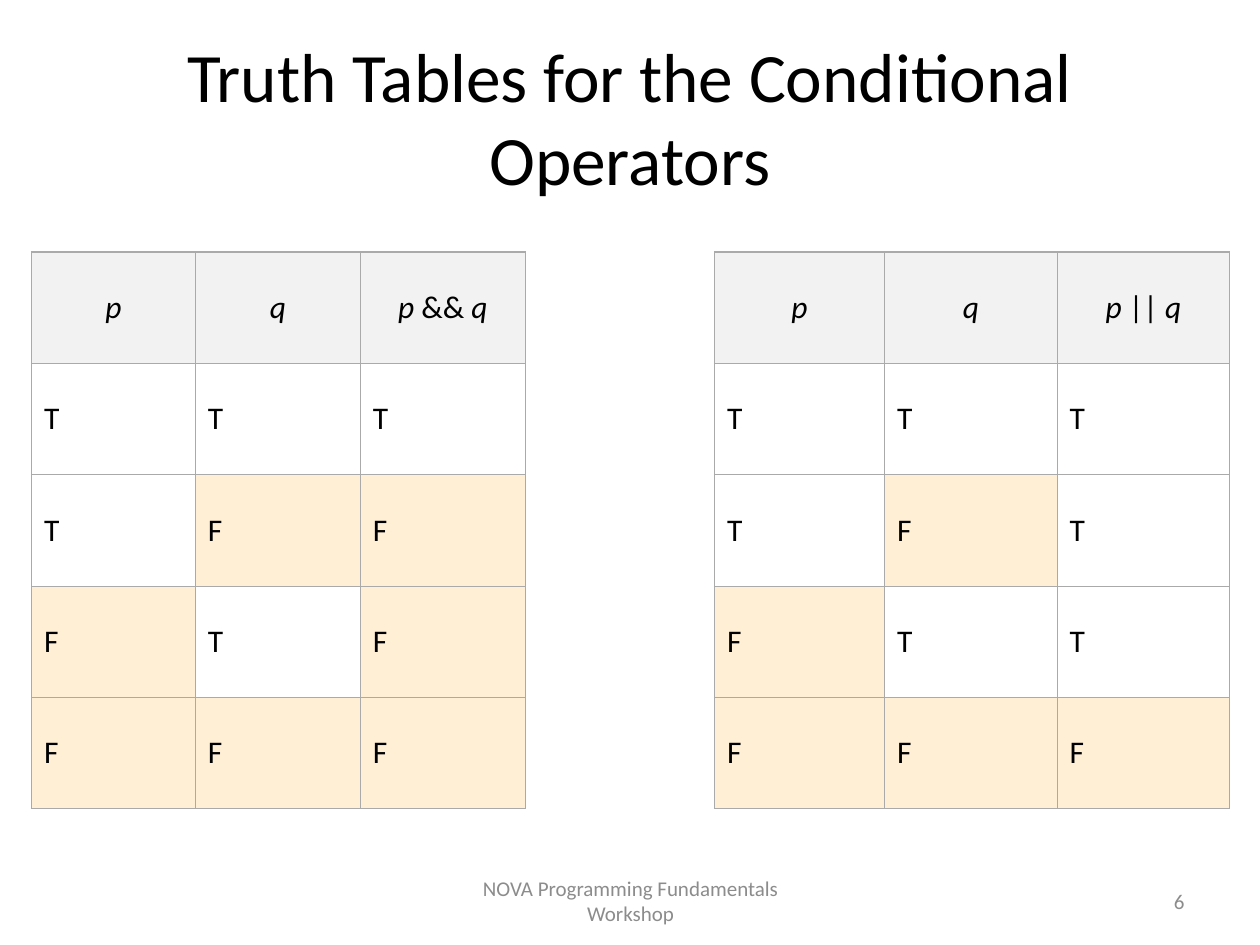
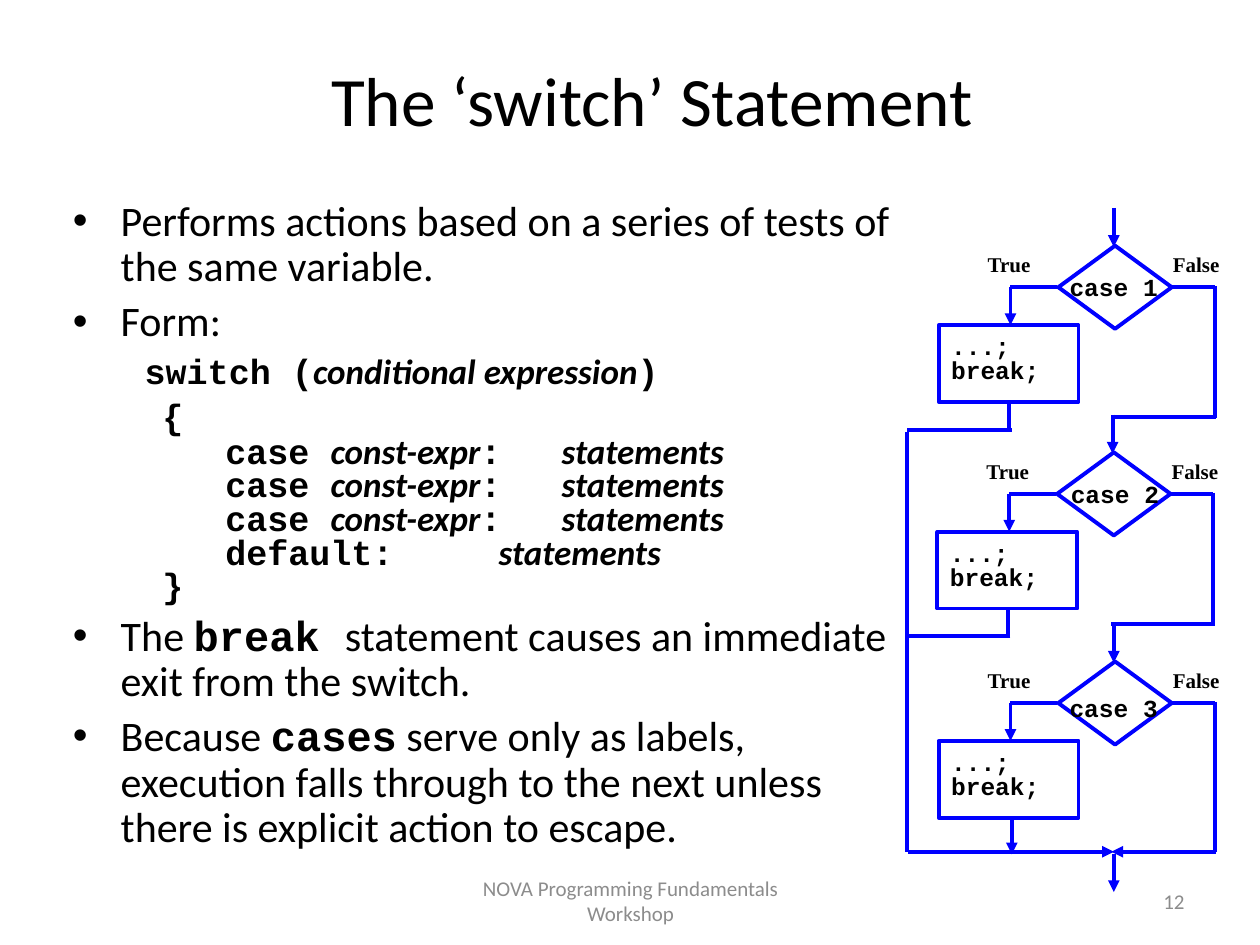
from dataclasses import dataclass

from lxml import etree
from pptx import Presentation
from pptx import util as u
from pptx.dml.color import RGBColor
from pptx.enum import shapes, text
from pptx.oxml import ns

PX = 9144  # one hundredth of an inch
CENTER, RIGHT = text.PP_ALIGN.CENTER, text.PP_ALIGN.RIGHT
MIDDLE = text.MSO_ANCHOR.MIDDLE


@dataclass(frozen=True)
class Theme:
    ink: str = "000000"
    muted: str = "8C8C8C"
    flow: str = "0000FF"
    grid: str = "AAAAAA"
    header: str = "F2F2F2"
    false: str = "FFEFD5"
    body: str = "Calibri"
    code: str = "Courier New"
    label: str = "Times New Roman"
    title_size: float = 39.6
    bullet_size: int = 24
    listing_size: int = 20
    table_size: int = 18
    case_size: int = 14
    small_size: int = 12
    flow_width: float = 2.25
    grid_width: float = 0.75


THEME = Theme()
CODE = dict(font=THEME.code, bold=True)
TERM = dict(bold=True, italic=True)


def px(*lengths):
    return [u.Emu(length * PX) for length in lengths]


def write(para, words, font=THEME.body, size=THEME.table_size, color=THEME.ink,
          bold=False, italic=False):
    span = para.add_run()
    span.text = words
    span.font.name, span.font.size = font, u.Pt(size)
    span.font.bold, span.font.italic = bold, italic
    span.font.color.rgb = RGBColor.from_string(color)


def add_box(page, box, words="", align=None, anchor=text.MSO_ANCHOR.TOP, **style):
    frame = page.shapes.add_textbox(*px(*box)).text_frame
    frame.word_wrap, frame.vertical_anchor = True, anchor
    if words:
        frame.paragraphs[0].alignment = align
        write(frame.paragraphs[0], words, **style)
    return frame


def add_page(deck, title, title_box, number):
    """Add a blank page with the shared title and footer."""
    page = deck.slides.add_slide(deck.slide_layouts[6])
    add_box(page, title_box, title, CENTER, MIDDLE, size=THEME.title_size)
    footer = dict(anchor=MIDDLE, size=THEME.small_size, color=THEME.muted)
    add_box(page, (342, 695, 317, 40), "NOVA Programming Fundamentals Workshop",
            CENTER, **footer)
    add_box(page, (717, 695, 233, 40), str(number), RIGHT, **footer)
    return page


def add_borders(cell):
    props = cell._tc.get_or_add_tcPr()
    for position, side in enumerate(("a:lnL", "a:lnR", "a:lnT", "a:lnB")):
        line = etree.Element(ns.qn(side), w=str(u.Pt(THEME.grid_width)))
        fill = etree.SubElement(line, ns.qn("a:solidFill"))
        etree.SubElement(fill, ns.qn("a:srgbClr"), val=THEME.grid)
        props.insert(position, line)


def add_truth_table(page, box, widths, operator, results):
    rows = ["TT", "TF", "FT", "FF"]
    table = page.shapes.add_table(len(rows) + 1, 3, *px(*box)).table
    table.first_row = table.horz_banding = False
    for column, width in zip(table.columns, px(*widths)):
        column.width = width
    for row in table.rows:
        row.height = u.Emu(box[3] * PX // len(table.rows))

    headings = ["p", "q", f"p {operator} q"]
    values = [list(inputs + result) for inputs, result in zip(rows, results)]
    for y, entries in enumerate([headings] + values):
        for x, entry in enumerate(entries):
            cell = table.cell(y, x)
            cell.vertical_anchor = MIDDLE
            para = cell.text_frame.paragraphs[0]
            if y == 0:
                para.alignment = CENTER
                for part in entry.partition(f" {operator} "):
                    if part:
                        write(para, part, italic=part in ("p", "q"))
            else:
                write(para, entry)
            color = THEME.header if y == 0 else THEME.false if entry == "F" else None
            if color:
                cell.fill.solid()
                cell.fill.fore_color.rgb = RGBColor.from_string(color)
            else:
                cell.fill.background()
            add_borders(cell)


def add_para(frame, spans, size, indent, bullet=False, spacing=0.9, before=0):
    """Append a paragraph of (words, style) spans; indent moves its first line."""
    para = frame.paragraphs[0]
    if para.runs:
        para = frame.add_paragraph()
    para.line_spacing, para.space_before = spacing, u.Pt(before)
    props = para._p.get_or_add_pPr()
    props.set("marL", str(38 * PX))
    props.set("indent", str(indent * PX))
    if bullet:
        etree.SubElement(props, ns.qn("a:buFont"), typeface="Arial")
        etree.SubElement(props, ns.qn("a:buChar"), char="•")
    for words, style in spans:
        write(para, words, size=size, **style)


def add_explanation(page, box):
    frame = add_box(page, box)

    def add_bullet(*spans):
        add_para(frame, spans, THEME.bullet_size, -38, bullet=True, before=5.5)

    def add_code(indent, *spans, **layout):
        add_para(frame, spans, THEME.listing_size, indent, **layout)

    add_bullet(("Performs actions based on a series of tests of the same variable.", {}))
    add_bullet(("Form:", {}))
    add_code(19, ("switch (", CODE), ("conditional expression", TERM), (")", CODE),
             before=4.5)
    add_code(33, ("{", CODE), before=4.5)
    for _ in range(3):
        add_code(83, ("case ", CODE), ("const-expr", TERM), (":\t", CODE),
                 ("statements", TERM), spacing=0.8)
    add_code(83, ("default:\t\t", CODE), ("statements", TERM), spacing=0.8)
    add_code(33, ("}", CODE), spacing=0.8)
    add_bullet(("The ", {}), ("break ", CODE),
               ("statement causes an immediate exit from the switch.", {}))
    add_bullet(("Because ", {}), ("cases", CODE),
               (" serve only as labels, execution falls through to the next unless "
                "there is explicit action to escape.", {}))


def draw_line(page, left, top, start, end, arrow=False):
    """Draw a flow line between two points relative to left and top."""
    points = px(left + start[0], top + start[1], left + end[0], top + end[1])
    link = page.shapes.add_connector(shapes.MSO_CONNECTOR.STRAIGHT, *points)
    link.line.color.rgb = RGBColor.from_string(THEME.flow)
    link.line.width = u.Pt(THEME.flow_width)
    if arrow:
        etree.SubElement(link.line._get_or_add_ln(), ns.qn("a:tailEnd"), type="triangle")
    etree.SubElement(link._element.spPr, ns.qn("a:effectLst"))


def add_outline(page, kind, box):
    shape = page.shapes.add_shape(kind, *px(*box))
    shape.shadow.inherit = False
    shape.fill.background()
    shape.line.color.rgb = RGBColor.from_string(THEME.flow)
    shape.line.width = u.Pt(THEME.flow_width)
    return shape


def add_case(page, left, top, number, label_at, last):
    """Draw one test, its action and its branches; left is the return rail."""
    add_outline(page, shapes.MSO_SHAPE.DIAMOND, (left + 120, top, 90, 66))
    add_box(page, (left + label_at[0], top + label_at[1], 117, 34), f"case {number}",
            size=THEME.case_size, **CODE)
    for answer, x, width in (("True", 54, 65), ("False", 201, 70)):
        add_box(page, (left + x, top, width, 33), answer, font=THEME.label,
                size=THEME.small_size, bold=True)

    action = add_outline(page, shapes.MSO_SHAPE.RECTANGLE, (left + 25, top + 63, 111, 61))
    frame = action.text_frame
    frame.vertical_anchor = text.MSO_ANCHOR.TOP
    for para, words, spacing in ((frame.paragraphs[0], "...;", 1),
                                 (frame.add_paragraph(), "break;", 0.8)):
        para.alignment, para.line_spacing = text.PP_ALIGN.LEFT, spacing
        write(para, words, size=THEME.case_size, **CODE)

    lines = [((164, -30), (164, 1), True), ((119, 33), (82, 33), False),
             ((82, 33), (82, 63), True), ((244, 33), (207, 33), False),
             ((244, 32), (244, 151 if last else 137), False)]
    if last:
        lines += [((83, 123), (83, 153), True), ((245, 151), (162, 151), True),
                  ((1, 151), (164, 151), True), ((164, 153), (164, 183), True)]
    else:
        lines += [((81, 123), (81, 147), False), ((83, 146), (0, 146), False),
                  ((245, 136), (163, 136), False)]
    for start, end, arrow in lines:
        draw_line(page, left, top, start, end, arrow)


def add_flowchart(page, left, top):
    cases = [(0, 0, (119, 16)), (-1, 164, (121, 16)), (0, 330, (119, 20))]
    for number, (x, y, label_at) in enumerate(cases, 1):
        add_case(page, left + x, top + y, number, label_at, last=number == len(cases))
    draw_line(page, left, top, (0, 148), (0, 481))


def main():
    deck = Presentation()
    deck.slide_width, deck.slide_height = px(1000, 750)

    page = add_page(deck, "Truth Tables for the Conditional Operators",
                    (50, 30, 900, 125), 6)
    add_truth_table(page, (25, 200, 392, 442), (130, 131, 131), "&&", "TFFF")
    add_truth_table(page, (567, 200, 409, 442), (135, 137, 137), "||", "TTTF")

    page = add_page(deck, "The ‘switch’ Statement", (129, 40, 777, 77), 12)
    add_explanation(page, (48, 154, 689, 542))
    add_flowchart(page, 720, 195)
    deck.save("out.pptx")


if __name__ == "__main__":
    main()
